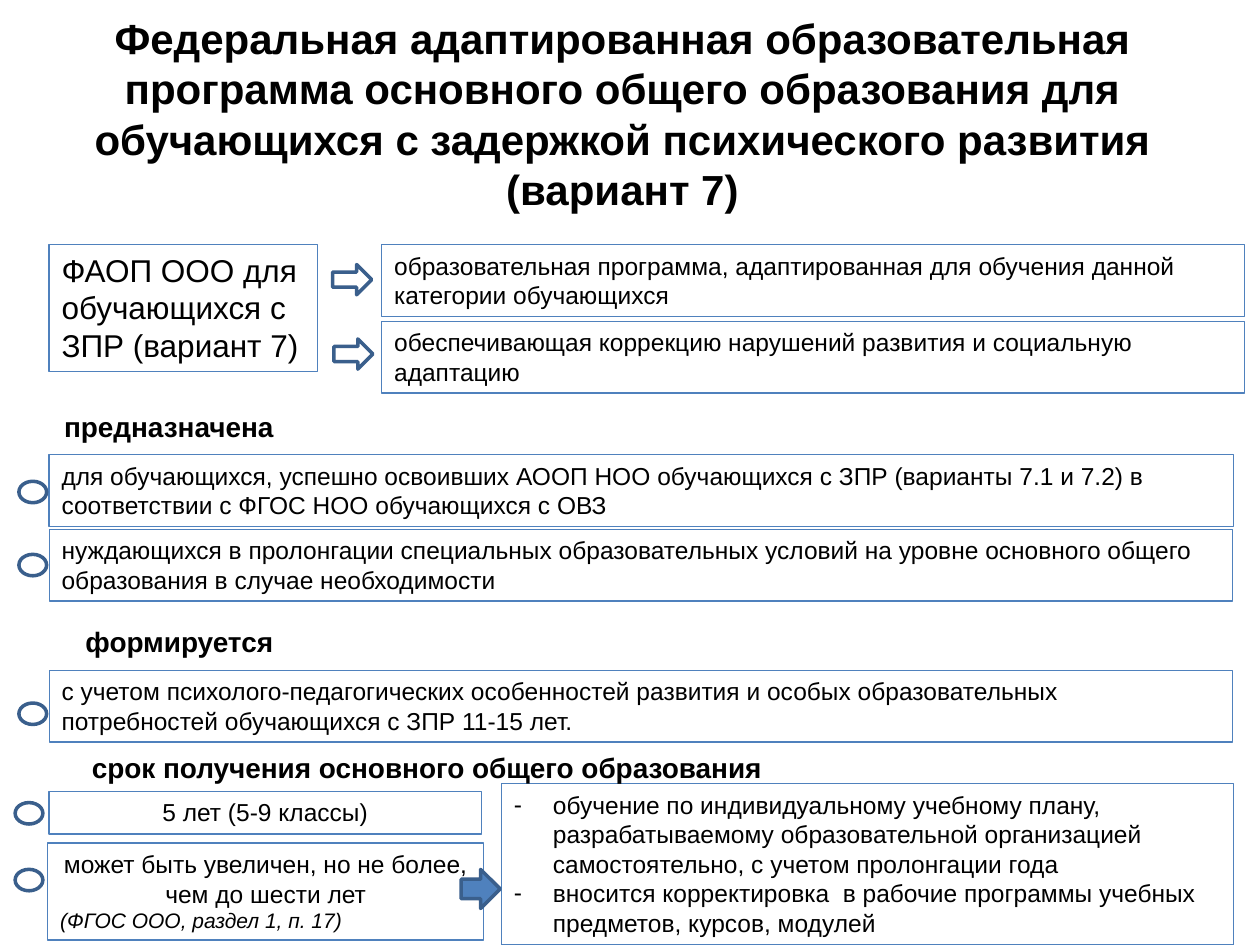
from dataclasses import dataclass

from lxml import etree
from pptx import Presentation
from pptx.dml.color import RGBColor
from pptx.enum.shapes import MSO_SHAPE
from pptx.enum.text import MSO_ANCHOR, MSO_AUTO_SIZE, PP_ALIGN
from pptx.oxml.ns import qn
from pptx.util import Emu, Pt

RECTANGLE = MSO_SHAPE.RECTANGLE
OVAL = MSO_SHAPE.OVAL
RIGHT_ARROW = MSO_SHAPE.RIGHT_ARROW
LEFT, CENTER = PP_ALIGN.LEFT, PP_ALIGN.CENTER
TOP = MSO_ANCHOR.TOP
GROW = MSO_AUTO_SIZE.SHAPE_TO_FIT_TEXT

PX = 9144  # one hundred px to the inch
FONT = "Arial"
HANGING_INDENT = 31
COLORS = {"text": "000000", "border": "4F81BD", "outline": "3A5F8C",
          "accent": "4F81BD", "white": "FFFFFF"}


@dataclass
class Heading:
    text: str
    left: int
    top: int
    width: int
    height: int
    size: int = 16
    align: PP_ALIGN = LEFT
    wrap: bool = False


@dataclass
class Frame:
    lines: list[str]
    left: int
    top: int
    width: int
    height: int = 57
    size: int = 14
    align: PP_ALIGN = LEFT
    bulleted: bool = False
    source: str = ""


@dataclass
class Marker:
    kind: MSO_SHAPE
    left: int
    top: int
    width: int
    height: int
    fill: str = "white"


TERM_DETAILS = Frame([
    "обучение по индивидуальному учебному плану, разрабатываемому образовательной "
    "организацией самостоятельно, с учетом пролонгации года",
    "вносится корректировка  в рабочие программы учебных предметов, курсов, модулей",
], 398, 622, 581, 128, bulleted=True)

HEADINGS = [
    Heading("Федеральная адаптированная образовательная программа основного общего "
            "образования для обучающихся с задержкой психического развития (вариант 7)",
            0, 5, 988, 172, size=24, align=CENTER, wrap=True),
    Heading("предназначена", 41, 320, 188, 37),
    Heading("формируется", 58, 491, 171, 37),
    Heading("срок получения основного общего образования", 63, 591, 642, 37, wrap=True),
]

FRAMES = [
    Frame(["ФАОП ООО для обучающихся с ЗПР (вариант 7)"], 39, 194, 213, 101, size=18),
    Frame(["образовательная программа, адаптированная для обучения данной категории "
           "обучающихся"], 303, 194, 685),
    Frame(["обеспечивающая коррекцию нарушений развития и социальную адаптацию"],
          303, 255, 685),
    Frame(["для обучающихся, успешно освоивших АООП НОО обучающихся с ЗПР (варианты 7.1 "
           "и 7.2) в соответствии с ФГОС НОО обучающихся с ОВЗ"], 39, 361, 940),
    Frame(["нуждающихся в пролонгации специальных образовательных условий на уровне "
           "основного общего образования в случае необходимости"], 39, 420, 939),
    Frame(["с учетом психолого-педагогических особенностей развития и особых "
           "образовательных потребностей обучающихся с ЗПР 11-15 лет."], 39, 532, 939),
    Frame(["5 лет (5-9 классы)"], 39, 628, 343, 34, align=CENTER),
    Frame(["может быть увеличен, но не более, чем до шести лет"], 38, 669, 346, 77,
          align=CENTER, source="(ФГОС ООО, раздел 1, п. 17)"),
]

RINGS = [Marker(OVAL, left, top, 22, 17)
         for left, top in ((15, 382), (15, 440), (15, 558), (12, 637), (12, 690))]
ARROWS = [
    Marker(RIGHT_ARROW, 366, 690, 31, 31, fill="accent"),
    Marker(RIGHT_ARROW, 264, 210, 31, 24),
    Marker(RIGHT_ARROW, 265, 269, 31, 24),
]


def color(name: str) -> RGBColor:
    return RGBColor.from_string(COLORS[name])


def place(item) -> list[Emu]:
    return [Emu(length * PX) for length in (item.left, item.top, item.width, item.height)]


def set_outline(shape, name: str, weight: float) -> None:
    shape.line.color.rgb = color(name)
    shape.line.width = Pt(weight)
    shape.shadow.inherit = False


def write(para, text: str, *, size: int, align: PP_ALIGN = LEFT,
          bold: bool = False, italic: bool = False) -> None:
    para.alignment = align
    span = para.add_run()
    span.text = text
    span.font.name = FONT
    span.font.size = Pt(size)
    span.font.bold = bold
    span.font.italic = italic
    span.font.color.rgb = color("text")


def add_dash(para) -> None:
    properties = para._p.get_or_add_pPr()
    properties.set("marL", str(HANGING_INDENT * PX))
    properties.set("indent", str(-HANGING_INDENT * PX))
    etree.SubElement(properties, qn("a:buFont")).set("typeface", FONT)
    etree.SubElement(properties, qn("a:buChar")).set("char", "-")


def prepare_text(shape, wrap: bool = True):
    text_frame = shape.text_frame
    text_frame.word_wrap = wrap
    text_frame.auto_size = GROW
    text_frame.vertical_anchor = TOP
    return text_frame


def draw_heading(page, heading: Heading) -> None:
    box = page.shapes.add_textbox(*place(heading))
    text_frame = prepare_text(box, heading.wrap)
    write(text_frame.paragraphs[0], heading.text, size=heading.size,
          align=heading.align, bold=True)


def draw_frame(page, frame: Frame) -> None:
    box = page.shapes.add_shape(RECTANGLE, *place(frame))
    box.fill.background()
    set_outline(box, "border", 0.75)
    text_frame = prepare_text(box)
    for index, line in enumerate(frame.lines):
        para = text_frame.add_paragraph() if index else text_frame.paragraphs[0]
        write(para, line, size=frame.size, align=frame.align)
        if frame.bulleted:
            add_dash(para)
    if frame.source:
        write(text_frame.add_paragraph(), frame.source, size=12, italic=True)


def draw_marker(page, marker: Marker) -> None:
    shape = page.shapes.add_shape(marker.kind, *place(marker))
    shape.fill.solid()
    shape.fill.fore_color.rgb = color(marker.fill)
    set_outline(shape, "outline", 2)


def main() -> None:
    deck = Presentation()
    deck.slide_width, deck.slide_height = Emu(1000 * PX), Emu(750 * PX)
    page = deck.slides.add_slide(deck.slide_layouts[6])

    # Text: the details of the term lie behind everything else
    draw_frame(page, TERM_DETAILS)
    for heading in HEADINGS:
        draw_heading(page, heading)
    for frame in FRAMES:
        draw_frame(page, frame)

    # Rings beside the statements, arrows between the frames
    for marker in RINGS + ARROWS:
        draw_marker(page, marker)

    deck.save("out.pptx")


if __name__ == "__main__":
    main()
